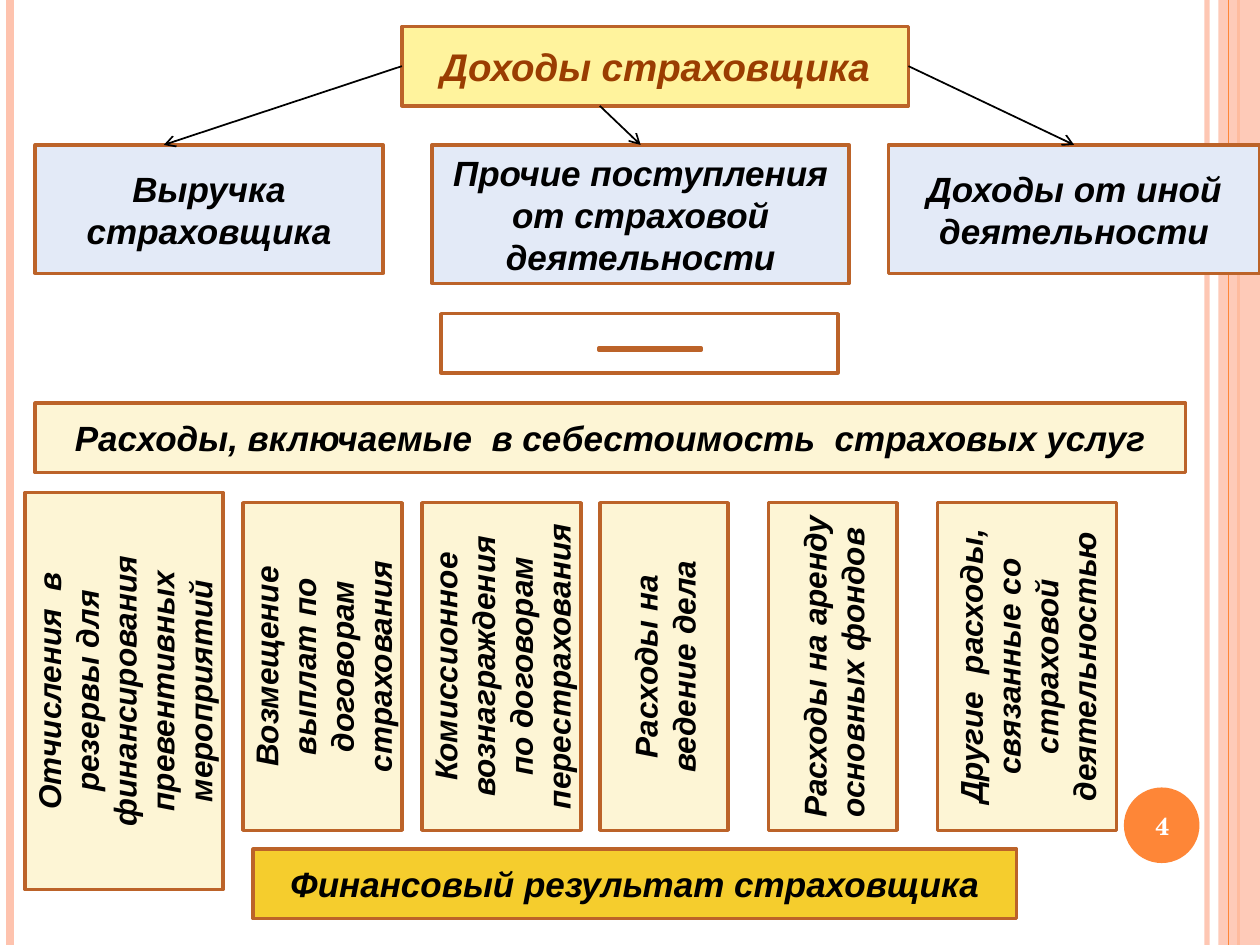
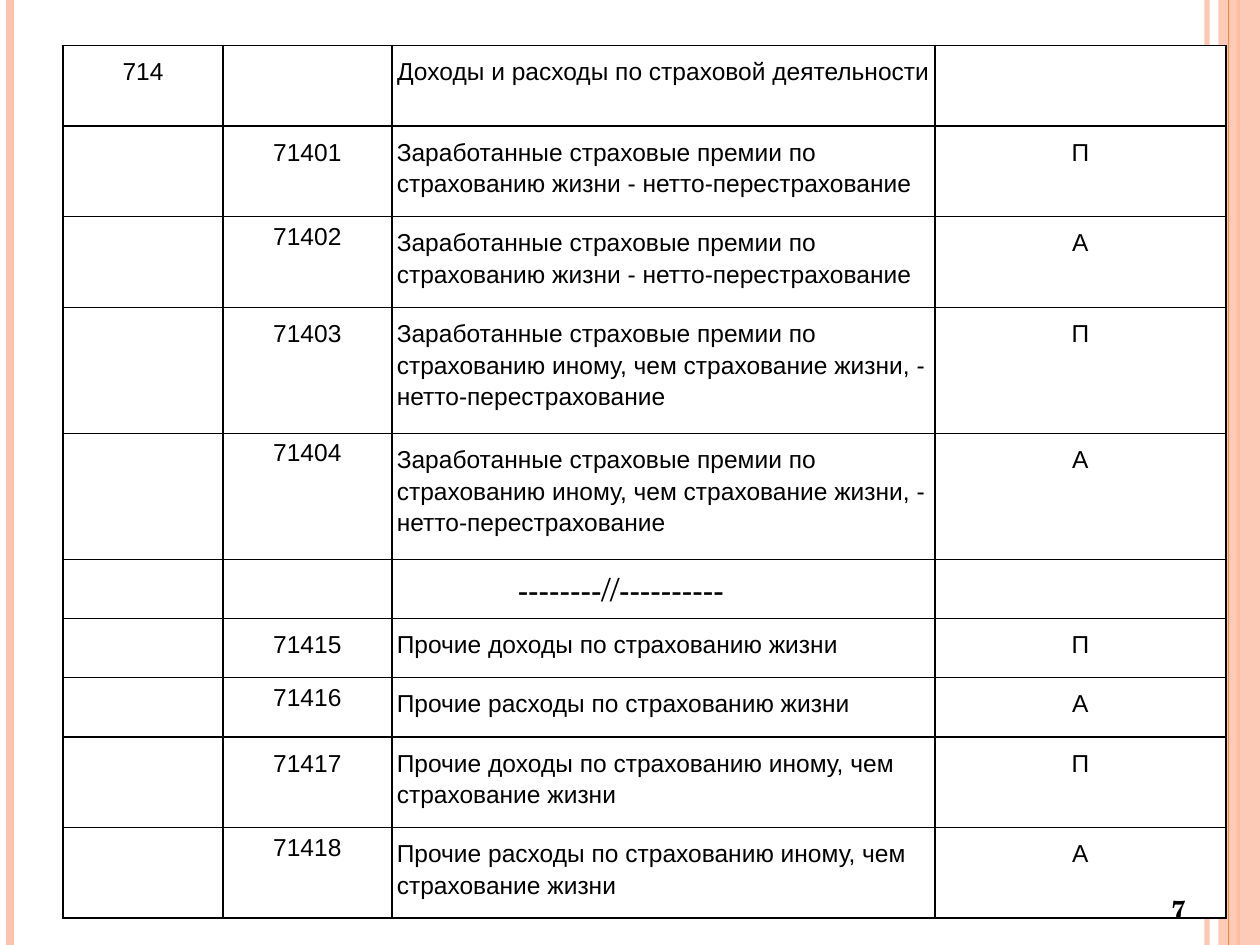
"""Build two slides on insurer income, expenses and the accounts for them."""
from lxml import etree
from pptx import Presentation
from pptx.dml.color import RGBColor
from pptx.enum.shapes import MSO_CONNECTOR, MSO_SHAPE
from pptx.enum.text import MSO_ANCHOR, MSO_AUTO_SIZE, PP_ALIGN
from pptx.oxml.ns import qn
from pptx.util import Inches, Pt

SANS, SERIF = "Arial", "TeX Gyre Schola"
BLACK, WHITE = "000000", "FFFFFF"
PEACH, ORANGE, BROWN, RUST = "FEC3AE", "FE8637", "BC6329", "9A3D01"
YELLOW, BLUE, CREAM, GOLD = "FFF39D", "E3EAF7", "FDF5D5", "F5CD2D"
TITLE_ONLY, BLANK = 5, 6

BOX_FONT = {"name": SANS, "size": Pt(20), "bold": True, "italic": True}
TITLE_FONT = BOX_FONT | {"size": Pt(22)}
COST_FONT = BOX_FONT | {"size": Pt(18)}
NUMBER_FONT = {"name": SERIF, "size": Pt(14), "bold": True}
CELL_FONT = {"name": SANS, "size": Pt(14)}
GAP_FONT = {"name": SERIF, "size": Pt(18)}
FRAME_FORMAT = {"word_wrap": True, "auto_size": MSO_AUTO_SIZE.NONE,
                "vertical_anchor": MSO_ANCHOR.MIDDLE}
CELL_MARGINS = {"margin_left": Inches(0.04), "margin_right": Inches(0.04),
                "margin_top": Inches(0.07), "margin_bottom": Inches(0.07)}

INCOMES = [
    ("Выручка страховщика", (0.28, 1.15, 2.76, 1.02)),
    ("Прочие поступления от страховой деятельности", (3.43, 1.15, 3.31, 1.1)),
    ("Доходы от иной деятельности", (7.05, 1.15, 2.95, 1.02)),
]
COSTS = [
    ("Возмещение выплат по договорам страхования", 1.93, 1.26),
    ("Комиссионное вознаграждения по договорам перестрахования", 3.35, 1.26),
    ("Расходы на ведение дела", 4.76, 1.02),
    ("Расходы на аренду основных фондов", 6.1, 1.02),
    ("Другие  расходы, связанные со страховой деятельностью", 7.44, 1.42),
]

LIFE_PREMIUMS = "Заработанные страховые премии по страхованию жизни - нетто-перестрахование"
OTHER_PREMIUMS = ("Заработанные страховые премии по страхованию иному, "
                  "чем страхование жизни, - нетто-перестрахование")
GAP_MARK = "--------//----------"
COLUMN_WIDTHS = [1.27, 1.34, 4.31, 2.31]
ACCOUNTS = [
    (0.64, "714", "", "Доходы и расходы по страховой деятельности", ""),
    (0.72, "", "71401", LIFE_PREMIUMS, "П"),
    (0.72, "", "71402", LIFE_PREMIUMS, "А"),
    (1.0, "", "71403", OTHER_PREMIUMS, "П"),
    (1.0, "", "71404", OTHER_PREMIUMS, "А"),
    (0.47, "", "", GAP_MARK, ""),
    (0.47, "", "71415", "Прочие доходы по страхованию жизни", "П"),
    (0.47, "", "71416", "Прочие расходы по страхованию жизни", "А"),
    (0.72, "", "71417", "Прочие доходы по страхованию иному, чем страхование жизни", "П"),
    (0.72, "", "71418", "Прочие расходы по страхованию иному, чем страхование жизни", "А"),
]


def rgb(value):
    return RGBColor.from_string(value)


def inches(values):
    return [Inches(value) for value in values]


def apply(target, values):
    for name, value in values.items():
        setattr(target, name, value)


def paint(fill, color, opacity=100):
    fill.solid()
    fill.fore_color.rgb = rgb(color)
    if opacity < 100:
        tint = fill._xPr.find(".//" + qn("a:srgbClr"))
        etree.SubElement(tint, qn("a:alpha"), val=str(opacity * 1000))


def write(frame, text, font, color=BLACK, align=PP_ALIGN.CENTER, spacing=None):
    frame.text = text
    paragraph = frame.paragraphs[0]
    apply(paragraph, {"alignment": align, "line_spacing": spacing})
    run_font = paragraph.runs[0].font
    apply(run_font, font)
    run_font.color.rgb = rgb(color)


def outline(shape, color=BROWN, width=2):
    shape.line.color.rgb = rgb(color)
    shape.line.width = Pt(width)


def add_plain(slide, kind, area, color, opacity=100):
    shape = slide.shapes.add_shape(kind, *inches(area))
    shape.shadow.inherit = False
    paint(shape.fill, color, opacity)
    shape.line.fill.background()
    return shape


def add_box(slide, area, color, text="", font=BOX_FONT, kind=MSO_SHAPE.RECTANGLE):
    box = add_plain(slide, kind, area, color)
    outline(box)
    if text:
        apply(box.text_frame, FRAME_FORMAT)
        write(box.text_frame, text, font)
    return box


def add_cost(slide, text, area):
    cost = add_box(slide, area, CREAM, text, COST_FONT)
    cost.text_frame._txBody.bodyPr.set("vert", "vert270")
    return cost


def add_line(slide, start, end, color, width, opacity=100):
    line = slide.shapes.add_connector(MSO_CONNECTOR.STRAIGHT, *inches(start + end))
    paint(line.line.fill, color, opacity)
    line.line.width = Pt(width)
    etree.SubElement(line._element.spPr, qn("a:effectLst"))
    return line


def add_arrow(slide, start, end):
    arrow = add_line(slide, start, end, BLACK, 1)
    etree.SubElement(arrow.line._ln, qn("a:tailEnd"), type="arrow")
    return arrow


def add_bands(slide):
    for x, color, width, opacity in [(9.58, PEACH, 3, 93), (0.08, PEACH, 4.5, 100),
                                     (9.83, ORANGE, 1.5, 100)]:
        add_line(slide, (x, 0), (x, 7.5), color, width, opacity)
    add_plain(slide, MSO_SHAPE.RECTANGLE, (9.67, 0, 0.33, 7.5), PEACH, 87)
    add_line(slide, (9.75, 0), (9.75, 7.5), ORANGE, 0.75)


def add_number(slide, number, left, top, color):
    label = slide.shapes.add_textbox(*inches((left, top, 0.67, 0.57)))
    apply(label.text_frame, FRAME_FORMAT)
    write(label.text_frame, number, NUMBER_FONT, color)


def add_title(slide, text, area):
    title = slide.shapes.title
    apply(title, dict(zip(("left", "top", "width", "height"), inches(area))))
    paint(title.fill, YELLOW)
    outline(title)
    apply(title.text_frame, FRAME_FORMAT)
    write(title.text_frame, text, TITLE_FONT, RUST)
    return title


def add_borders(cell):
    properties = cell._tc.get_or_add_tcPr()
    for position, side in enumerate(("a:lnL", "a:lnR", "a:lnT", "a:lnB")):
        border = etree.Element(qn(side), w=str(Pt(1)))
        fill = etree.SubElement(border, qn("a:solidFill"))
        etree.SubElement(fill, qn("a:srgbClr"), val=BLACK)
        properties.insert(position, border)


def fill_cell(cell, text, column):
    paint(cell.fill, WHITE)
    add_borders(cell)
    if text == GAP_MARK:
        cell.margin_left = Inches(1)
        write(cell.text_frame, text, GAP_FONT, align=PP_ALIGN.LEFT)
    elif column == 1 and text in ("71402", "71404", "71416", "71418"):
        write(cell.text_frame, text, CELL_FONT)
    elif text:
        is_entry = column == 2 and not text.startswith("Доходы")
        apply(cell, CELL_MARGINS)
        write(cell.text_frame, text, CELL_FONT, spacing=1.15,
              align=PP_ALIGN.LEFT if is_entry else PP_ALIGN.CENTER)


def add_accounts(slide):
    height = sum(account[0] for account in ACCOUNTS)
    table = slide.shapes.add_table(
        len(ACCOUNTS), len(COLUMN_WIDTHS),
        *inches((0.5, 0.36, sum(COLUMN_WIDTHS), height))).table
    apply(table, {"first_row": False, "horz_banding": False})
    for column, width in zip(table.columns, COLUMN_WIDTHS):
        column.width = Inches(width)
    for row, (row_height, *texts) in zip(table.rows, ACCOUNTS):
        row.height = Inches(row_height)
        for column, (cell, text) in enumerate(zip(row.cells, texts)):
            fill_cell(cell, text, column)


def build_income_slide(deck):
    slide = deck.slides.add_slide(deck.slide_layouts[TITLE_ONLY])
    add_bands(slide)
    add_plain(slide, MSO_SHAPE.OVAL, (8.92, 6.25, 0.6, 0.6), ORANGE)
    add_number(slide, "4", 8.89, 6.27, WHITE)

    total = add_title(slide, "Доходы страховщика", (3.19, 0.21, 4.02, 0.63))
    _, receipts, other = [add_box(slide, area, BLUE, text) for text, area in INCOMES]
    to_revenue = add_arrow(slide, (3.19, 0.52), (1.3, 1.15))
    to_receipts = add_arrow(slide, (4.76, 0.84), (5.08, 1.15))
    to_other = add_arrow(slide, (7.2, 0.52), (8.52, 1.15))
    to_revenue.begin_connect(total, 1)
    to_receipts.end_connect(receipts, 0)
    to_other.begin_connect(total, 3)
    to_other.end_connect(other, 0)

    add_box(slide, (3.5, 2.49, 3.15, 0.47), WHITE)
    add_box(slide, (4.61, 2.73, 1.1, 0.08), WHITE, kind=MSO_SHAPE.MATH_MINUS)
    add_box(slide, (0.28, 3.2, 9.13, 0.55), CREAM,
            "Расходы, включаемые  в себестоимость  страховых услуг")
    add_cost(slide, "Отчисления  в резервы для финансирования превентивных мероприятий",
             (0.2, 3.91, 1.57, 3.15))
    for text, left, width in COSTS:
        cost = add_cost(slide, text, (left, 3.99, width, 2.6))
        if "аренду" in text:
            cost.text_frame.paragraphs[0].alignment = PP_ALIGN.LEFT
    add_box(slide, (2.01, 6.74, 6.06, 0.55), GOLD, "Финансовый результат страховщика")


def build_accounts_slide(deck):
    slide = deck.slides.add_slide(deck.slide_layouts[BLANK])
    add_bands(slide)
    add_accounts(slide)
    add_number(slide, "7", 9.02, 6.93, BLACK)


def main():
    deck = Presentation()
    apply(deck, {"slide_width": Inches(10), "slide_height": Inches(7.5)})
    build_income_slide(deck)
    build_accounts_slide(deck)
    deck.save("out.pptx")


if __name__ == "__main__":
    main()
